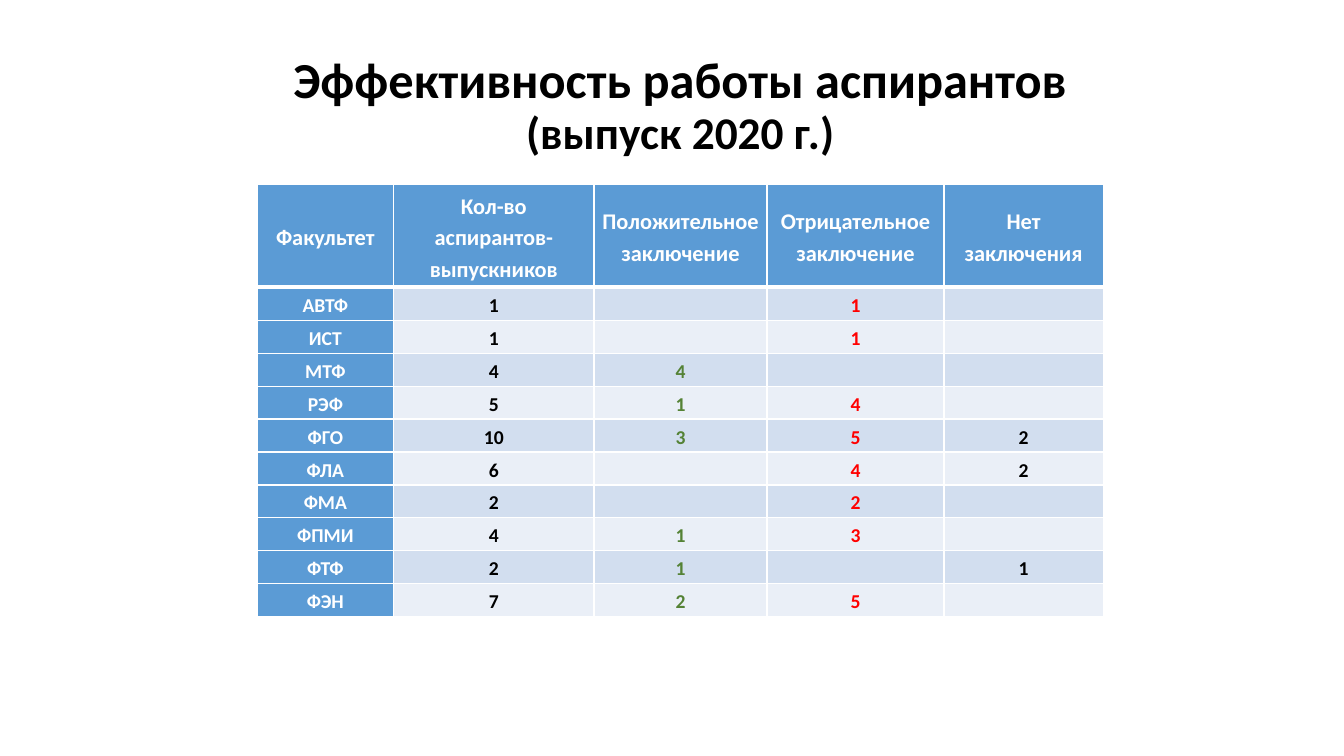
import pptx
import pptx.dml.color
import pptx.enum.text
import pptx.oxml
import pptx.oxml.ns
import pptx.util
from pptx.util import Cm

# Content
TITLE_LINES = ["Эффективность работы аспирантов", "(выпуск 2020 г.)"]
HEADERS = [
    "Факультет",
    "Кол-во аспирантов-выпускников",
    "Положительное заключение",
    "Отрицательное заключение",
    "Нет заключения",
]
FACULTIES = [
    ("АВТФ", "1", "", "1", ""),
    ("ИСТ", "1", "", "1", ""),
    ("МТФ", "4", "4", "", ""),
    ("РЭФ", "5", "1", "4", ""),
    ("ФГО", "10", "3", "5", "2"),
    ("ФЛА", "6", "", "4", "2"),
    ("ФМА", "2", "", "2", ""),
    ("ФПМИ", "4", "1", "3", ""),
    ("ФТФ", "2", "1", "", "1"),
    ("ФЭН", "7", "2", "5", ""),
]


class Theme:
    font = "Calibri"
    black, white = "000000", "FFFFFF"
    positive, negative = "548235", "FF0000"
    header_fill = "5B9BD5"
    band_fills = ("D2DEEF", "EAEFF7")
    column_colors = (white, black, positive, negative, black)
    title_sizes = (36, 32.4)
    header_size, body_size = 16, 14
    thin_line, thick_line = 1, 3


# Layout
COLUMN_WIDTHS = [Cm(width) for width in (3.44, 5.05, 4.36, 4.46, 4.01)]
HEADER_HEIGHT, ROW_HEIGHT = Cm(2.59), Cm(0.83)
TABLE_LEFT, TABLE_TOP = Cm(6.48), Cm(4.65)
CELL_MARGIN = Cm(0.17)


def add_text(paragraph, text, *, size, color, line_spacing):
    paragraph.alignment = pptx.enum.text.PP_ALIGN.CENTER
    paragraph.line_spacing = line_spacing
    run = paragraph.add_run()
    run.text = text
    run.font.name = Theme.font
    run.font.size = pptx.util.Pt(size)
    run.font.bold = True
    run.font.color.rgb = pptx.dml.color.RGBColor.from_string(color)


def set_borders(cell, top, bottom):
    properties = cell._tc.get_or_add_tcPr()
    widths = {"L": Theme.thin_line, "R": Theme.thin_line, "T": top, "B": bottom}
    for side, width in widths.items():
        properties.append(pptx.oxml.parse_xml(
            f'<a:ln{side} {pptx.oxml.ns.nsdecls("a")} w="{pptx.util.Pt(width)}">'
            f'<a:solidFill><a:srgbClr val="{Theme.white}"/></a:solidFill></a:ln{side}>'
        ))


def format_cell(cell, text, row_index, column_index):
    is_header = row_index == 0
    cell.margin_left = cell.margin_right = CELL_MARGIN
    cell.margin_top = cell.margin_bottom = 0
    cell.vertical_anchor = pptx.enum.text.MSO_ANCHOR.MIDDLE
    set_borders(
        cell,
        top=Theme.thick_line if row_index == 1 else Theme.thin_line,
        bottom=Theme.thick_line if is_header else Theme.thin_line,
    )
    if is_header or column_index == 0:
        fill = Theme.header_fill
    else:
        fill = Theme.band_fills[(row_index - 1) % 2]
    cell.fill.solid()
    cell.fill.fore_color.rgb = pptx.dml.color.RGBColor.from_string(fill)
    if text:
        add_text(
            cell.text_frame.paragraphs[0], text,
            size=Theme.header_size if is_header else Theme.body_size,
            color=Theme.white if is_header else Theme.column_colors[column_index],
            line_spacing=1.15,
        )


def add_title(slide):
    title = slide.shapes.title
    title.left, title.top = Cm(2.54), Cm(1.47)
    title.width, title.height = Cm(29.21), Cm(2.46)
    frame = title.text_frame
    frame.auto_size = pptx.enum.text.MSO_AUTO_SIZE.NONE
    frame.vertical_anchor = pptx.enum.text.MSO_ANCHOR.MIDDLE
    paragraph = frame.paragraphs[0]
    for index, (line, size) in enumerate(zip(TITLE_LINES, Theme.title_sizes)):
        if index:
            paragraph.add_line_break()
        add_text(paragraph, line, size=size, color=Theme.black, line_spacing=0.9)


def add_results_table(slide):
    rows = [HEADERS, *FACULTIES]
    heights = [HEADER_HEIGHT] + [ROW_HEIGHT] * len(FACULTIES)
    table = slide.shapes.add_table(
        len(rows), len(HEADERS), TABLE_LEFT, TABLE_TOP, sum(COLUMN_WIDTHS), sum(heights)
    ).table
    table.horz_banding = False
    for column, width in zip(table.columns, COLUMN_WIDTHS):
        column.width = width
    for row_index, (values, height) in enumerate(zip(rows, heights)):
        table.rows[row_index].height = height
        for column_index, value in enumerate(values):
            format_cell(table.cell(row_index, column_index), value, row_index, column_index)


def main():
    presentation = pptx.Presentation()
    presentation.slide_width, presentation.slide_height = Cm(33.87), Cm(19.05)
    slide = presentation.slides.add_slide(presentation.slide_layouts[5])
    add_title(slide)
    add_results_table(slide)
    presentation.save("out.pptx")


if __name__ == "__main__":
    main()
